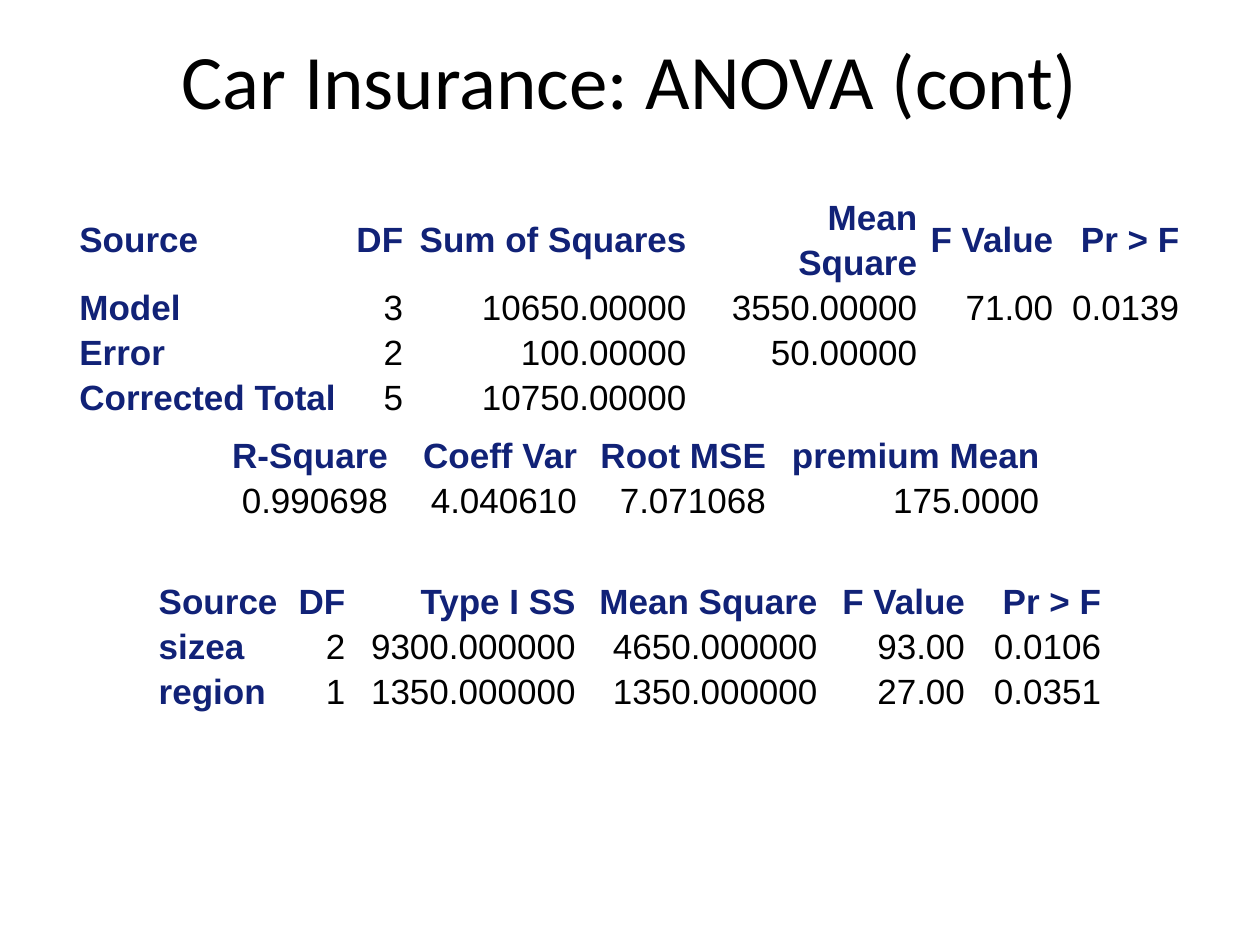
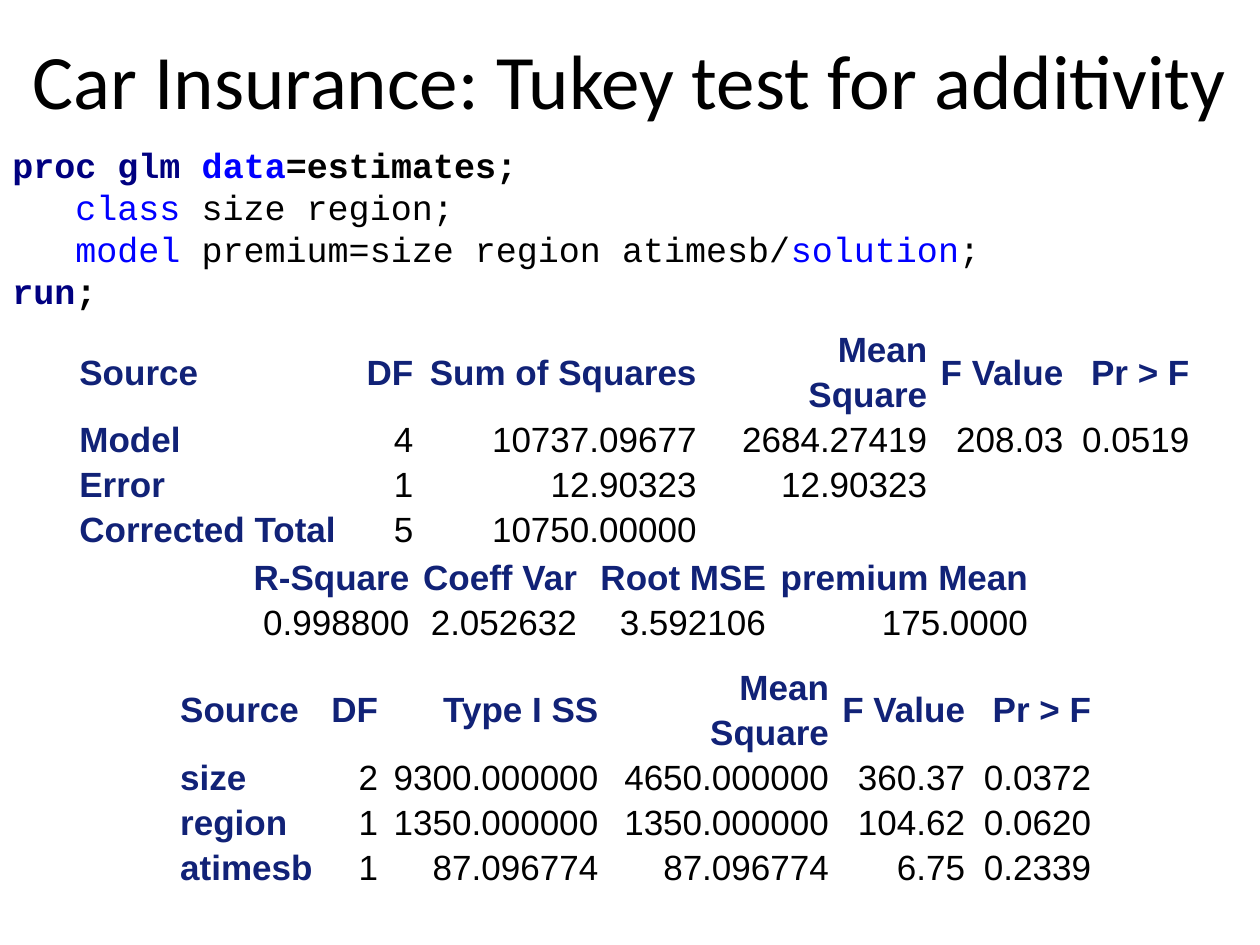
import pptx
import pptx.dml.color
import pptx.enum.text
import pptx.oxml.ns
import pptx.util

Inches, Pt = pptx.util.Inches, pptx.util.Pt
ALIGN, ANCHOR = pptx.enum.text.PP_ALIGN, pptx.enum.text.MSO_ANCHOR

BLACK, LABEL, KEYWORD, STEP = "000000", "112277", "0000FF", "000080"
NO_STYLE = "{2D5ABB26-0587-4C30-8999-92F81FD0307C}"
LINE_POINTS = 25.5
ROW_POINTS = 25.7
CODE_INDENT = 0.5

ANOVA_HEADER = ["Source", "DF", "Sum of Squares", "Mean Square", "F Value", "Pr > F"]
FIT_HEADER = ["R-Square", "Coeff Var", "Root MSE", "premium Mean"]
TYPE_HEADER = ["Source", "DF", "Type I SS", "Mean Square", "F Value", "Pr > F"]

# Code lines: indent level, then (text, colour, bold) runs
TUKEY_CODE = [
    (0, [("proc glm ", STEP, True), ("data", KEYWORD, True), ("=estimates;", BLACK, True)]),
    (1, [("class", KEYWORD, False), (" size region;", BLACK, False)]),
    (1, [("model", KEYWORD, False), (" premium=size region atimesb/", BLACK, False),
         ("solution", KEYWORD, False), (";", BLACK, False)]),
    (0, [("run", STEP, True), (";", BLACK, True)]),
]

# Tables: left, top, lines in the header row, column widths, rows
SLIDES = [
    {
        "title": "Car Insurance: ANOVA (cont)",
        "title_margin": 0.5,
        "code": [],
        "tables": [
            (0.58, 1.53, 2, [2.17, 0.5, 2.25, 1.83, 1.08, 1], [
                ANOVA_HEADER,
                ["Model", "3", "10650.00000", "3550.00000", "71.00", "0.0139"],
                ["Error", "2", "100.00000", "50.00000", "", ""],
                ["Corrected Total", "5", "10750.00000", "", "", ""]]),
            (1.71, 3.42, 1, [1.42, 1.5, 1.5, 2.17], [
                FIT_HEADER,
                ["0.990698", "4.040610", "7.071068", "175.0000"]]),
            (1.21, 4.58, 1, [1.08, 0.5, 1.83, 1.92, 1.17, 1.08], [
                TYPE_HEADER,
                ["sizea", "2", "9300.000000", "4650.000000", "93.00", "0.0106"],
                ["region", "1", "1350.000000", "1350.000000", "27.00", "0.0351"]]),
        ],
    },
    {
        "title": "Car Insurance: Tukey test for additivity",
        "title_margin": 0,
        "code": TUKEY_CODE,
        "tables": [
            (0.58, 2.58, 2, [2.25, 0.5, 2.25, 1.83, 1.08, 1], [
                ANOVA_HEADER,
                ["Model", "4", "10737.09677", "2684.27419", "208.03", "0.0519"],
                ["Error", "1", "12.90323", "12.90323", "", ""],
                ["Corrected Total", "5", "10750.00000", "", "", ""]]),
            (1.88, 4.39, 1, [1.42, 1.33, 1.5, 2.08], [
                FIT_HEADER,
                ["0.998800", "2.052632", "3.592106", "175.0000"]]),
            (1.38, 5.26, 2, [1.17, 0.5, 1.75, 1.83, 1.08, 1], [
                TYPE_HEADER,
                ["size", "2", "9300.000000", "4650.000000", "360.37", "0.0372"],
                ["region", "1", "1350.000000", "1350.000000", "104.62", "0.0620"],
                ["atimesb", "1", "87.096774", "87.096774", "6.75", "0.2339"]]),
        ],
    },
]


def set_font(font, name, size, color, bold=False):
    font.name, font.size, font.bold = name, Pt(size), bold
    font.color.rgb = pptx.dml.color.RGBColor.from_string(color)


def add_text_frame(slide, left, top, width, height):
    box = slide.shapes.add_textbox(Inches(left), Inches(top), Inches(width), Inches(height))
    box.text_frame.word_wrap = True
    return box.text_frame


def add_title(slide, text, margin):
    frame = add_text_frame(slide, margin, 0, 10 - 2 * margin, 1.25)
    frame.vertical_anchor = ANCHOR.MIDDLE
    frame.text = text
    paragraph = frame.paragraphs[0]
    paragraph.alignment = ALIGN.CENTER
    set_font(paragraph.runs[0].font, "Calibri", 44, BLACK)


def add_code(slide, lines):
    frame = add_text_frame(slide, 0, 1.09, 10, 1.67)
    for number, (level, runs) in enumerate(lines):
        paragraph = frame.add_paragraph() if number else frame.paragraphs[0]
        paragraph._p.get_or_add_pPr().set("marL", str(Inches(CODE_INDENT * level)))
        for text, color, bold in runs:
            run = paragraph.add_run()
            run.text = text
            set_font(run.font, "Courier New", 20, color, bold)


def fill_cell(cell, text, is_label, alignment):
    cell.fill.background()
    cell.vertical_anchor = ANCHOR.MIDDLE
    cell.margin_left = cell.margin_right = Inches(0.05)
    cell.margin_top = cell.margin_bottom = 0
    cell.text_frame.text = text
    paragraph = cell.text_frame.paragraphs[0]
    paragraph.alignment = alignment
    paragraph.line_spacing = Pt(LINE_POINTS)
    for run in paragraph.runs:
        set_font(run.font, "Arial", 20, LABEL if is_label else BLACK, is_label)


def add_result_table(slide, left, top, header_lines, widths, rows):
    """Add an unruled table; a first column headed Source holds row labels."""
    heights = [Pt(ROW_POINTS * header_lines)] + [Pt(ROW_POINTS)] * (len(rows) - 1)
    frame = slide.shapes.add_table(len(rows), len(widths), Inches(left), Inches(top),
                                   Inches(sum(widths)), sum(heights))
    next(frame.element.iter(pptx.oxml.ns.qn("a:tableStyleId"))).text = NO_STYLE
    table = frame.table
    table.first_row = table.horz_banding = False
    for column, width in zip(table.columns, widths):
        column.width = Inches(width)
    for table_row, height in zip(table.rows, heights):
        table_row.height = height
    has_labels = rows[0][0] == "Source"
    for row_number, row in enumerate(rows):
        for column_number, text in enumerate(row):
            in_label_column = has_labels and column_number == 0
            fill_cell(table.cell(row_number, column_number), text,
                      row_number == 0 or in_label_column,
                      ALIGN.LEFT if in_label_column else ALIGN.RIGHT)


def main():
    presentation = pptx.Presentation()
    presentation.slide_width, presentation.slide_height = Inches(10), Inches(7.5)
    for content in SLIDES:
        slide = presentation.slides.add_slide(presentation.slide_layouts[6])
        add_title(slide, content["title"], content["title_margin"])
        if content["code"]:
            add_code(slide, content["code"])
        for table in content["tables"]:
            add_result_table(slide, *table)
    presentation.save("out.pptx")


if __name__ == "__main__":
    main()
